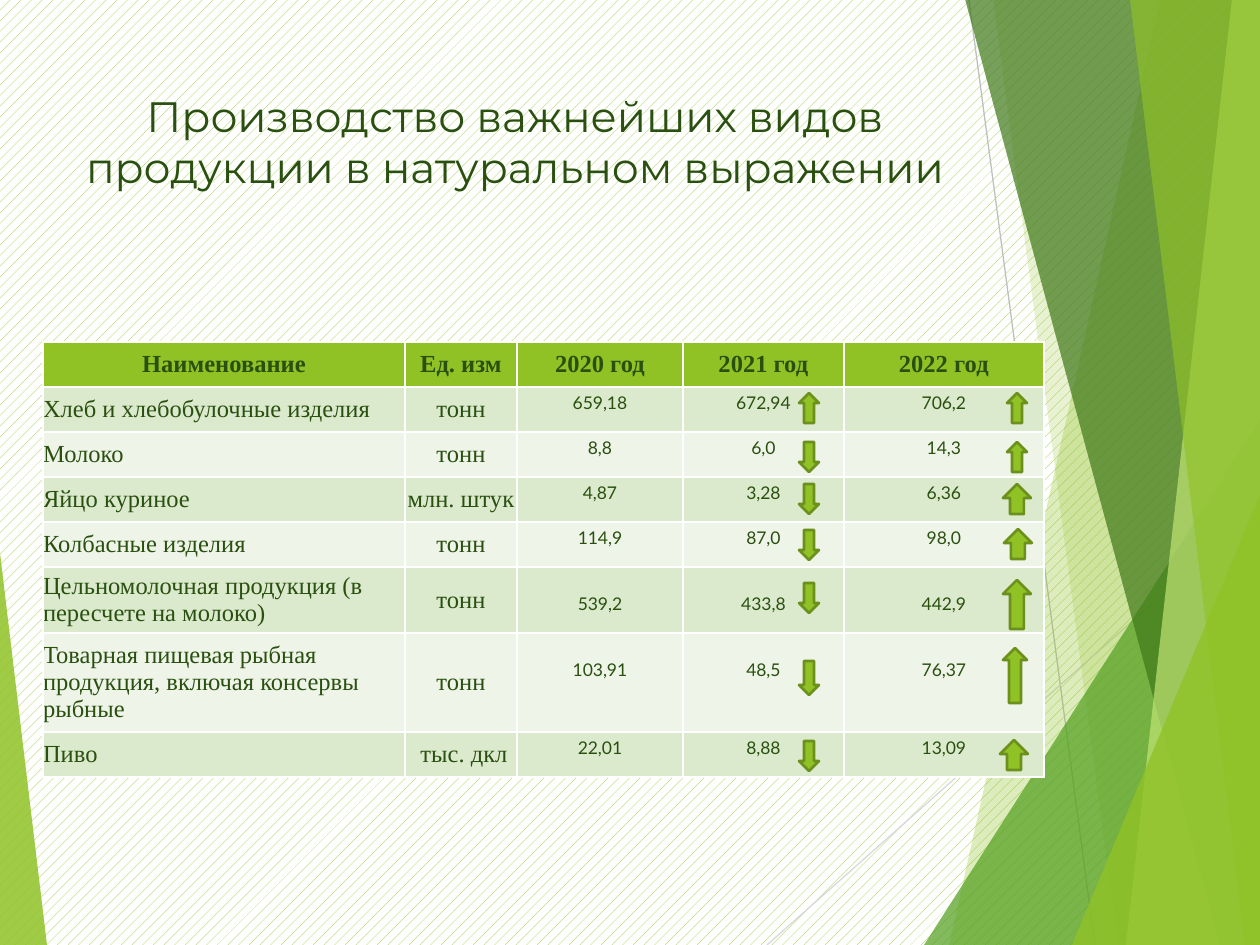
from lxml import etree
from pptx import Presentation
from pptx.dml.color import RGBColor
from pptx.enum.dml import MSO_PATTERN
from pptx.enum.shapes import MSO_CONNECTOR, MSO_SHAPE
from pptx.enum.text import MSO_ANCHOR, MSO_AUTO_SIZE, PP_ALIGN
from pptx.oxml.ns import qn
from pptx.util import Pt

LEFT, CENTER = PP_ALIGN.LEFT, PP_ALIGN.CENTER
TOP, MIDDLE = MSO_ANCHOR.TOP, MSO_ANCHOR.MIDDLE
UP, DOWN = MSO_SHAPE.UP_ARROW, MSO_SHAPE.DOWN_ARROW
TRIANGLE, STRAIGHT = MSO_SHAPE.ISOSCELES_TRIANGLE, MSO_CONNECTOR.STRAIGHT

PX = 914400 / 126  # EMU in one px
W, H = 1260, 945

THEME = {
    "text": "2A5010", "lime": "90C226", "green": "54A021", "forest": "3F7819",
    "pale": "C0E474", "edge": "6B901C", "white": "FFFFFF",
    "bands": ("DBE9CD", "EEF4E8"),
    "title_font": "Montserrat", "label_font": "Times New Roman", "value_font": "Lato",
    "title_size": 24.3, "label_size": 14, "value_size": 10,
}


def emu(*lengths):
    return [round(n * PX) for n in lengths]


def write(tf, text, *, size, font, align=CENTER, bold=False):
    p = tf.paragraphs[0]
    p.alignment = align
    r = p.add_run()
    r.text = text
    r.font.size, r.font.name, r.font.bold = Pt(size), font, bold
    r.font.color.rgb = RGBColor.from_string(THEME["text"])


prs = Presentation()
prs.slide_width, prs.slide_height = emu(W, H)
s = prs.slides.add_slide(prs.slide_layouts[5])

# Background pattern
fill = s.background.fill
fill.patterned()
fill.pattern = MSO_PATTERN.PERCENT_20
fill.fore_color.rgb = RGBColor.from_string(THEME["lime"])
fill.back_color.rgb = RGBColor.from_string(THEME["white"])

# Thin lines behind the facets
for ends, color in (((969, 0, 1095, H), "BFBFBF"), ((W, 508, 767, H), "D9D9D9")):
    line = s.shapes.add_connector(STRAIGHT, *emu(*ends))
    line.line.color.rgb = RGBColor.from_string(color)
    line.line.width = Pt(0.75)
    etree.SubElement(line._element.spPr, qn("a:effectLst"))

# Facets: bands give their top and bottom left x, triangles their top, left, right and apex
FACETS = [
    ("band", (1160, 949), "lime", 30),
    ("band", (993, 1118), "lime", 20),
    ("triangle", (420, 924, W, 1), "green", 72),
    ("band", (965, 1220), "forest", 70),
    ("band", (1232, 1126), "pale", 70),
    ("band", (1130, 1245), "lime", 65),
    ("triangle", (495, 1072, W, 1), "lime", 80),
    ("triangle", (553, 0, 47, 0), "lime", 85),
]
for kind, place, color, opacity in FACETS:
    if kind == "band":
        x_top, x_bottom = place
        outline = s.shapes.build_freeform(x_top, -1, scale=PX)
        outline.add_line_segments([(W, -1), (W, H), (x_bottom, H)])
        sp = outline.convert_to_shape()
    else:
        top, left, right, apex = place
        sp = s.shapes.add_shape(TRIANGLE, *emu(left, top, right - left, H - top))
        sp.adjustments[0] = apex
    sp.shadow.inherit = False
    sp.line.fill.background()
    sp.fill.solid()
    sp.fill.fore_color.rgb = RGBColor.from_string(THEME[color])
    clr = sp._element.spPr.find(qn("a:solidFill"))[0]
    etree.SubElement(clr, qn("a:alpha"), val=str(opacity * 1000))

# Title
title = s.shapes.title
title.left, title.top, title.width, title.height = emu(71, 84, 888, 181)
tf = title.text_frame
tf.word_wrap, tf.auto_size, tf.vertical_anchor = True, MSO_AUTO_SIZE.NONE, TOP
write(tf, "Производство важнейших видов продукции в натуральном выражении",
      size=THEME["title_size"], font=THEME["title_font"])

# Table
ROWS = [
    ("Наименование", "Ед. изм", "2020 год", "2021 год", "2022 год"),
    ("Хлеб и хлебобулочные изделия", "тонн", "659,18", "672,94", "706,2"),
    ("Молоко", "тонн", "8,8", "6,0", "14,3"),
    ("Яйцо куриное", "млн. штук", "4,87", "3,28", "6,36"),
    ("Колбасные изделия", "тонн", "114,9", "87,0", "98,0"),
    ("Цельномолочная продукция (в пересчете на молоко)", "тонн", "539,2", "433,8", "442,9"),
    ("Товарная пищевая рыбная продукция, включая консервы рыбные", "тонн",
     "103,91", "48,5", "76,37"),
    ("Пиво", " тыс. дкл", "22,01", "8,88", "13,09"),
]
COL_WIDTHS = (362, 112, 166, 161, 200)
ROW_HEIGHTS = (45, 45, 45, 45, 45, 66, 99, 45)
table = s.shapes.add_table(len(ROWS), len(COL_WIDTHS),
                           *emu(43, 342, sum(COL_WIDTHS), sum(ROW_HEIGHTS))).table
for column, width in zip(table.columns, emu(*COL_WIDTHS)):
    column.width = width
for row, height in zip(table.rows, emu(*ROW_HEIGHTS)):
    row.height = height

for i, texts in enumerate(ROWS):
    for j, text in enumerate(texts):
        cell = table.cell(i, j)
        header, value = i == 0, i > 0 and j > 1
        cell.fill.solid()
        cell.fill.fore_color.rgb = RGBColor.from_string(
            THEME["lime"] if header else THEME["bands"][(i - 1) % 2])
        cell.vertical_anchor = TOP if value else MIDDLE
        # Values in the tall rows start one line lower
        top = 26 if ROW_HEIGHTS[i] > 45 else 5
        margins = (9, top, 9, 5) if value else (0, 0, 0, 0)
        (cell.margin_left, cell.margin_top,
         cell.margin_right, cell.margin_bottom) = emu(*margins)
        kind = "value" if value else "label"
        write(cell.text_frame, text, size=THEME[kind + "_size"], font=THEME[kind + "_font"],
              bold=header, align=LEFT if j == 0 and not header else CENTER)

# Trend arrows: 2022, then 2021
ARROWS = [
    (UP, 1007, 393, 20, 30), (UP, 1007, 442, 20, 30), (UP, 1003, 484, 28, 30),
    (UP, 1004, 529, 28, 30), (UP, 1003, 580, 28, 49), (UP, 1003, 648, 24, 55),
    (UP, 1000, 740, 28, 30), (UP, 799, 393, 20, 30),
]
ARROWS += [(DOWN, 799, y, 20, h) for y, h in
           ((442, 30), (484, 30), (530, 30), (583, 30), (661, 34), (741, 30))]
for shape, *box in ARROWS:
    sp = s.shapes.add_shape(shape, *emu(*box))
    sp.shadow.inherit = False
    sp.fill.solid()
    sp.fill.fore_color.rgb = RGBColor.from_string(THEME["lime"])
    sp.line.color.rgb = RGBColor.from_string(THEME["edge"])
    sp.line.width = Pt(1.5)

prs.save("out.pptx")
